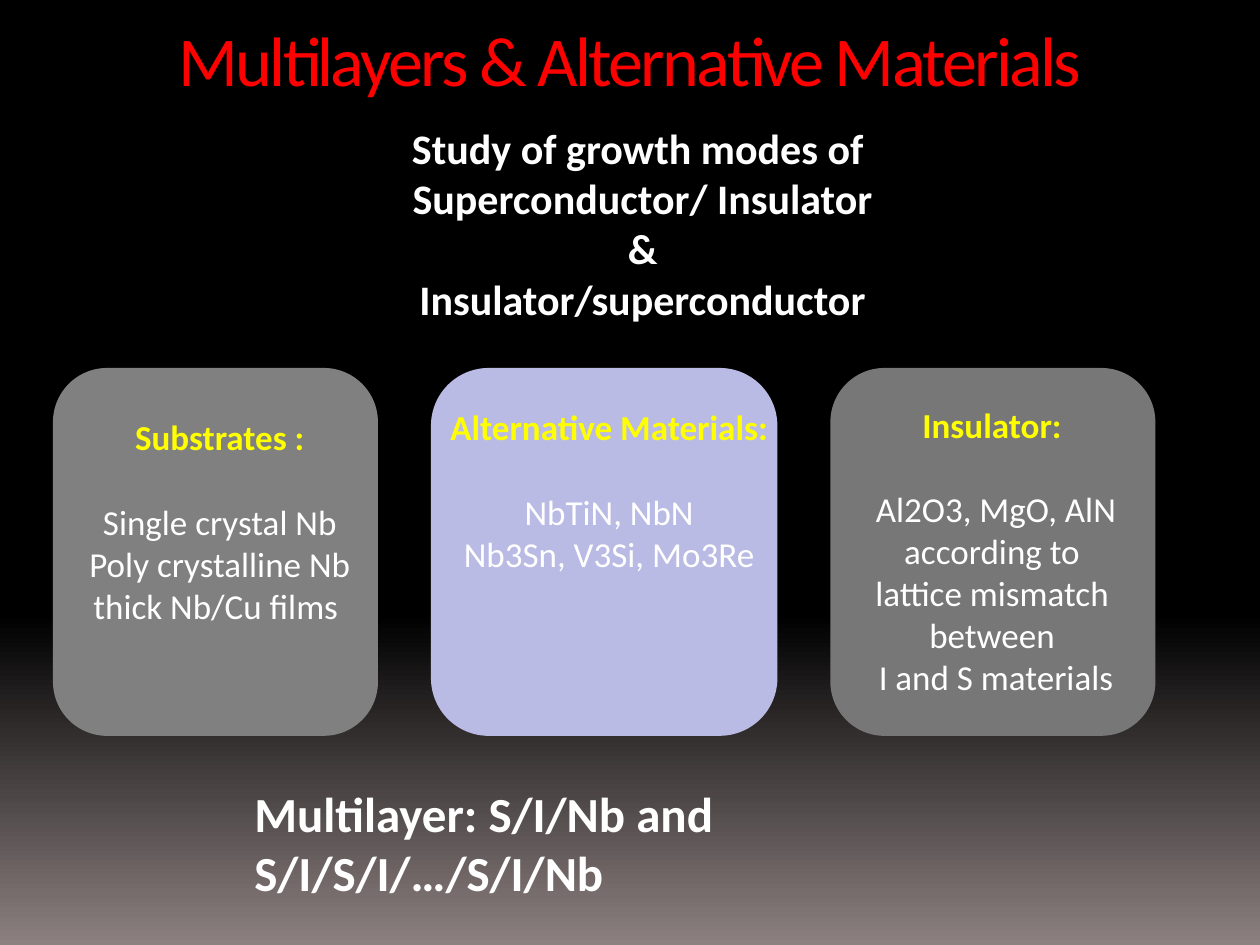
from copy import deepcopy

from pptx import Presentation
from pptx.dml.color import RGBColor
from pptx.enum.shapes import MSO_SHAPE
from pptx.enum.text import MSO_ANCHOR, PP_ALIGN
from pptx.util import Inches, Pt

ROUNDED = MSO_SHAPE.ROUNDED_RECTANGLE
TOP = MSO_ANCHOR.TOP
LEFT, CENTER = PP_ALIGN.LEFT, PP_ALIGN.CENTER

THEME = {
    "font": "Calibri",
    "background": [(0, "000000"), (65, "000000"), (100, "8C8080")],
    "title": {"size": 40, "color": "FF0000", "bold": False},
    "subtitle": {"size": 24, "color": "FFFFFF", "bold": True},
    "heading": {"size": 20, "color": "FFFF00", "bold": True},
    "body": {"size": 20, "color": "FFFFFF", "bold": False},
    "footer": {"size": 28, "color": "FFFFFF", "bold": True},
}

TITLE = ["Multilayers & Alternative Materials"]
SUBTITLE = ["Study of growth modes of ", "Superconductor/ Insulator", "&",
            "Insulator/superconductor"]
FOOTER = ["Multilayer: S/I/Nb and S/I/S/I/…/S/I/Nb"]
CARDS = [
    {"width": 2.58, "fill": "808080", "text_box": (0.58, 3.25, 2.33, 1.78), "wrap": True,
     "heading": "Substrates :",
     "body": ["Single crystal Nb", "Poly crystalline Nb", "thick Nb/Cu films "]},
    {"width": 2.75, "fill": "BABBE4", "text_box": (3.42, 3.17, 2.83, 1.45), "wrap": False,
     "heading": "Alternative Materials:",
     "body": ["NbTiN, NbN", "Nb3Sn, V3Si, Mo3Re"]},
    {"width": 2.58, "fill": "777777", "text_box": (6.81, 3.15, 2.19, 2.46), "wrap": False,
     "heading": "Insulator: ",
     "body": ["Al2O3, MgO, AlN", "according to ", "lattice mismatch ", "between ",
              "I and S materials"]},
]
CARD_LEFT, CARD_TOP, CARD_HEIGHT, CARD_GAP = 0.42, 2.92, 2.92, 0.42
HEADING_GAP = Pt(24.4)  # one line of body text


def paint_background(s):
    fill = s.background.fill
    fill.gradient()
    fill.gradient_angle = 270
    stops = fill.gradient_stops
    first = stops[0]._gs
    first.getparent().insert(1, deepcopy(first))
    for stop, (position, color) in zip(fill.gradient_stops, THEME["background"]):
        stop.position = position / 100
        stop.color.rgb = RGBColor.from_string(color)


def add_text(s, box, lines, align=CENTER, wrap=True):
    """Add a text box from (text, style name) lines and return its paragraphs."""
    tf = s.shapes.add_textbox(*map(Inches, box)).text_frame
    tf.word_wrap = wrap
    tf.vertical_anchor = TOP
    for i, (text, style) in enumerate(lines):
        p = tf.add_paragraph() if i else tf.paragraphs[0]
        p.alignment = align
        r = p.add_run()
        r.text = text
        look = THEME[style]
        formats = {"name": THEME["font"], "size": Pt(look["size"]), "bold": look["bold"]}
        for name, value in formats.items():
            setattr(r.font, name, value)
        r.font.color.rgb = RGBColor.from_string(look["color"])
    return tf.paragraphs


def styled(lines, style):
    return [(text, style) for text in lines]


def add_cards(s):
    left = CARD_LEFT
    for card in CARDS:
        sp = s.shapes.add_shape(ROUNDED, *map(Inches, (left, CARD_TOP, card["width"], CARD_HEIGHT)))
        sp.shadow.inherit = False
        sp.fill.solid()
        sp.fill.fore_color.rgb = RGBColor.from_string(card["fill"])
        sp.line.fill.background()
        left += card["width"] + CARD_GAP
        lines = [(card["heading"], "heading")] + styled(card["body"], "body")
        paragraphs = add_text(s, card["text_box"], lines, wrap=card["wrap"])
        paragraphs[0].space_after = HEADING_GAP


def main():
    prs = Presentation()
    prs.slide_width, prs.slide_height = Inches(10), Inches(7.5)
    s = prs.slides.add_slide(prs.slide_layouts[6])
    paint_background(s)
    add_cards(s)
    add_text(s, (1.92, 6.17, 6.55, 0.57), styled(FOOTER, "footer"), align=LEFT)
    add_text(s, (1.17, 0.92, 7.86, 1.72), styled(SUBTITLE, "subtitle"))
    title = add_text(s, (0.75, 0.08, 8.5, 1), styled(TITLE, "title"))
    title[0].runs[0].font._element.set("spc", "-150")
    prs.save("out.pptx")


if __name__ == "__main__":
    main()
